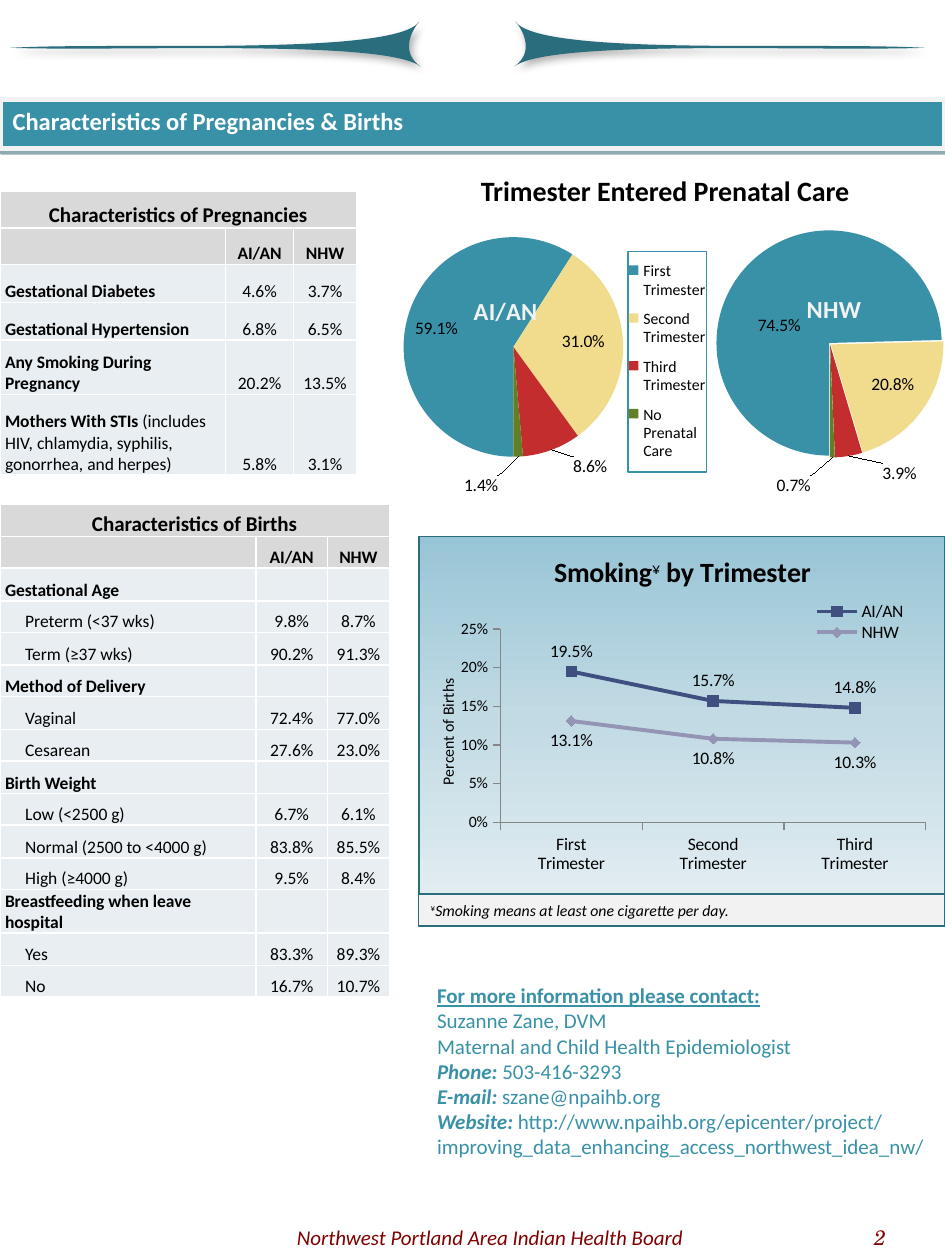
import pptx
import pptx.chart.data
import pptx.enum.chart
import pptx.enum.shapes
import pptx.enum.text
import pptx.oxml
import pptx.oxml.ns
import pptx.util
from lxml import etree
from pptx.dml.color import RGBColor
from pptx.util import Inches, Pt

qn = pptx.oxml.ns.qn
ALIGN = pptx.enum.text.PP_ALIGN
ANCHOR = pptx.enum.text.MSO_ANCHOR
KIND = pptx.enum.chart.XL_CHART_TYPE
SPOT = pptx.enum.chart.XL_LABEL_POSITION
MARK = pptx.enum.chart.XL_MARKER_STYLE
RECT = pptx.enum.shapes.MSO_SHAPE.RECTANGLE
HEX = {"teal": "3891A7", "deep": "2A6D7D", "sand": "F1DB8C", "red": "C32D2E",
       "green": "637F26", "black": "000000", "white": "FFFFFF", "maroon": "800000",
       "pale": "F2F2F2", "head": "D9D9D9", "body": "E8EEF1", "navy": "3F4F7F",
       "mauve": "9494B5", "axis": "868686", "bar": "205867"}
CATS = ["First Trimester", "Second Trimester", "Third Trimester", "No Prenatal Care"]
PREG = [("Gestational Diabetes", "4.6%", "3.7%"),
        ("Gestational Hypertension", "6.8%", "6.5%"),
        ("Any Smoking During\nPregnancy", "20.2%", "13.5%")]
STI = [[("Mothers With STIs ", "b"), ("(includes", "")],
       "HIV, chlamydia, syphilis,", "gonorrhea, and herpes)"]
BIRTHS = {
    "Gestational Age": [("Preterm (<37 wks)", "9.8%", "8.7%"),
                        ("Term (≥37 wks)", "90.2%", "91.3%")],
    "Method of Delivery": [("Vaginal", "72.4%", "77.0%"), ("Cesarean", "27.6%", "23.0%")],
    "Birth Weight": [("Low (<2500 g)", "6.7%", "6.1%"),
                     ("Normal (2500 to <4000 g)", "83.8%", "85.5%"),
                     ("High (≥4000 g)", "9.5%", "8.4%")],
    "Breastfeeding when leave\nhospital": [("Yes", "83.3%", "89.3%"),
                                           ("No", "16.7%", "10.7%")]}
CONTACT = [[("For more information please contact:", "bu")], "Suzanne Zane, DVM",
           "Maternal and Child Health Epidemiologist",
           [("Phone: ", "bi"), ("503-416-3293", "")],
           [("E-mail: ", "bi"), ("szane@npaihb.org", "")],
           [("Website: ", "bi"), ("http://www.npaihb.org/epicenter/project/", "")],
           "improving_data_enhancing_access_northwest_idea_nw/"]


def style(font, size, color="black", flags="", face="Calibri"):
    font.name, font.size = face, Pt(size)
    font.color.rgb = rgb(color)
    font.bold, font.italic = "b" in flags, "i" in flags
    if "u" in flags:
        font.underline = True
    if "^" in flags:
        font._element.set("baseline", "30000")


def rgb(name):
    return RGBColor.from_string(HEX[name])


def write(frame, lines, size, color="black", align=ALIGN.LEFT, face="Calibri"):
    """Each line is plain text or a list of (text, flags b, i, u, ^)."""
    for n, line in enumerate(lines):
        par = frame.add_paragraph() if n else frame.paragraphs[0]
        par.alignment = align
        for text, flags in [(line, "")] if isinstance(line, str) else line:
            run = par.add_run()
            run.text = text
            style(run.font, size, color, flags, face)


def fill(form, color):
    form.solid()
    form.fore_color.rgb = rgb(color)


def paint(shape, color, line=None, width=0.75):
    fill(shape.fill, color)
    if line:
        shape.line.color.rgb = rgb(line)
        shape.line.width = Pt(width)
    else:
        shape.line.fill.background()
    shape.shadow.inherit = False


def shade(shape, color, alpha, blur, dist, angle):
    root = shape._element.spPr.find(qn("a:effectLst"))
    drop = etree.SubElement(root, qn("a:outerShdw"), blurRad=str(Pt(blur)), dist=str(Pt(dist)),
                            dir=str(angle * 60000), algn="tl", rotWithShape="0")
    tint = etree.SubElement(drop, qn("a:srgbClr"), val=HEX[color])
    etree.SubElement(tint, qn("a:alpha"), val=str(alpha * 1000))


def swoosh(slide, curves):
    """Draw a closed outline of cubic curves, each two controls and an end."""
    ends = [tuple(map(Inches, c[-1])) for c in curves]
    pen = slide.shapes.build_freeform(*ends[-1])
    pen.add_line_segments(ends, close=True)
    shape = pen.convert_to_shape()
    for line, curve in zip(shape._element.findall(".//" + qn("a:lnTo")), curves):
        bend = etree.Element(qn("a:cubicBezTo"))
        for x, y in curve:
            etree.SubElement(bend, qn("a:pt"), x=str(Inches(x) - shape.left),
                             y=str(Inches(y) - shape.top))
        line.getparent().replace(line, bend)
    paint(shape, "deep")
    shade(shape, "black", 30, 4.5, 2.6, 53)


def text(slide, box, lines, size, color, align=ALIGN.LEFT, face="Calibri"):
    frame = slide.shapes.add_textbox(*map(Inches, box)).text_frame
    frame.word_wrap = True
    write(frame, lines, size, color, align, face)


def put(node, at, mode="", **box):
    """Give a chart part a manual layout, as fractions of the chart."""
    for old in node.findall(qn("c:layout")):
        node.remove(old)
    root = etree.Element(qn("c:layout"))
    man = etree.SubElement(root, qn("c:manualLayout"))
    if mode == "inner":
        etree.SubElement(man, qn("c:layoutTarget"), val="inner")
    if mode:
        for key in "xy":
            etree.SubElement(man, qn(f"c:{key}Mode"), val="edge")
    for key, val in box.items():
        etree.SubElement(man, qn(f"c:{key}"), val=str(val))
    node.insert(at, root)


def chart(slide, kind, box, cats, series, title, size, color):
    data = pptx.chart.data.CategoryChartData(number_format="0.0%")
    data.categories = cats
    for name, vals in series:
        data.add_series(name, vals)
    obj = slide.shapes.add_chart(kind, *map(Inches, box), data).chart
    obj.has_legend = False
    style(obj.font, 10)
    obj.has_title = True
    write(obj.chart_title.text_frame, [title], size, color, ALIGN.CENTER)
    return obj


def labels(owner, spot=None):
    owner.show_value = True
    owner.number_format, owner.number_format_is_linked = "0.0%", False
    style(owner.font, 10)
    if spot is not None:
        owner.position = spot


def pie(slide, box, name, vals, head, plot, tags):
    obj = chart(slide, KIND.PIE, box, CATS, [("Series 1", vals)], [(name, "b")], 14, "pale")
    put(obj.chart_title._element, 1, "edge", **dict(zip("xy", head)))
    area = obj.element.find(".//" + qn("c:plotArea"))
    put(area, 0, "inner", **dict(zip("xywh", plot)))
    wheel = area.find(qn("c:pieChart"))
    for old in wheel.findall(qn("c:firstSliceAng")):
        wheel.remove(old)
    etree.SubElement(wheel, qn("c:firstSliceAng"), val="180")
    part = obj.plots[0].series[0]
    labels(part.data_labels)
    for n, (color, tag) in enumerate(zip(("teal", "sand", "red", "green"), tags)):
        point = part.points[n]
        fill(point.format.fill, color)
        spot, x, y = tag
        point.data_label.position = spot
        style(point.data_label.font, 10)
        node = part._element.findall(".//" + qn("c:dLbl"))[n]
        put(node, 1, x=x, y=y)
        node.insert(2, etree.Element(qn("c:numFmt"), formatCode="0.0%", sourceLinked="0"))
    return obj


def legend(obj, size, **box):
    obj.has_legend = True
    obj.legend.include_in_layout = False
    style(obj.legend.font, size)
    put(obj.legend._element, 1, "edge", **box)


def border(inside, line):
    return pptx.oxml.parse_xml(
        f'<c:spPr {pptx.oxml.ns.nsdecls("c", "a")}>{inside}<a:ln w="9525"><a:solidFill>'
        f'<a:srgbClr val="{HEX[line]}"/></a:solidFill></a:ln></c:spPr>')


def smoking(slide):
    obj = chart(slide, KIND.LINE_MARKERS, (3.32, 4.25, 4.18, 2.85),
                [c.replace(" ", "\n") for c in CATS[:3]],
                [("AI/AN", (0.195, 0.157, 0.148)), ("NHW", (0.131, 0.108, 0.103))],
                [("Smoking", "b"), ("¥", "^"), (" by Trimester", "b")], 16, "black")
    put(obj.chart_title._element, 1, "edge", x=0.25, y=0.04)
    put(obj.element.find(".//" + qn("c:plotArea")), 0, "inner", x=0.155, y=0.26, w=0.81, h=0.54)
    legend(obj, 10, x=0.75, y=0.18, w=0.18, h=0.12)
    stops = "".join(f'<a:gs pos="{p}000"><a:srgbClr val="{c}"/></a:gs>'
                    for p, c in ((0, "98C5D6"), (50, "C1DAE4"), (100, "E1ECF1")))
    grad = f'<a:gradFill><a:gsLst>{stops}</a:gsLst><a:lin ang="5400000" scaled="0"/></a:gradFill>'
    obj.element.find(qn("c:chart")).addnext(border(grad, "deep"))
    val = obj.value_axis
    val.minimum_scale, val.maximum_scale, val.major_unit = 0, 0.25, 0.05
    val.has_major_gridlines = False
    val.tick_labels.number_format, val.tick_labels.number_format_is_linked = "0%", False
    write(val.axis_title.text_frame, ["Percent of Births"], 9, align=ALIGN.CENTER)
    put(val.axis_title._element, 1, "edge", x=0.03, y=0.39)
    for axis, size in ((val, 9), (obj.category_axis, 10)):
        style(axis.tick_labels.font, size)
        axis.format.line.color.rgb = rgb("axis")
    looks = (("navy", MARK.SQUARE, SPOT.ABOVE), ("mauve", MARK.DIAMOND, SPOT.BELOW))
    for part, (color, mark, spot) in zip(obj.plots[0].series, looks):
        part.smooth = False
        part.format.line.color.rgb = rgb(color)
        part.format.line.width = Pt(2.25)
        part.marker.style, part.marker.size = mark, 6
        fill(part.marker.format.fill, color)
        fill(part.marker.format.line.fill, color)
        labels(part.data_labels, spot)


def cell(box, lines, color, size=10, align=ALIGN.CENTER, left=0.01):
    box.margin_left, box.margin_right = Inches(left), Inches(0.01)
    box.margin_top, box.margin_bottom = Inches(0.01), 0
    box.vertical_anchor = ANCHOR.BOTTOM
    fill(box.fill, color)
    write(box.text_frame, lines, size, align=align)
    if not lines:
        etree.SubElement(box.text_frame.paragraphs[0]._p, qn("a:endParaRPr"), sz="1000")
    for n, side in enumerate("LRTB"):
        edge = etree.Element(qn(f"a:ln{side}"), w=str(Pt(1)))
        tint = etree.SubElement(edge, qn("a:solidFill"))
        etree.SubElement(tint, qn("a:srgbClr"), val=HEX["white"])
        box._tc.get_or_add_tcPr().insert(n, edge)


def table(slide, top, cols, tall, title, rows):
    """Each row is (label lines, left margin, values)."""
    grid = slide.shapes.add_table(len(tall), 3, 0, Inches(top), Inches(sum(cols)),
                                  Inches(sum(tall))).table
    for part, size in zip(grid.columns, cols):
        part.width = Inches(size)
    for part, size in zip(grid.rows, tall):
        part.height = Inches(size)
    grid.cell(0, 0).merge(grid.cell(0, 2))
    cell(grid.cell(0, 0), [[(title, "b")]], "head", 12)
    for c, name in enumerate(("", "AI/AN", "NHW")):
        cell(grid.cell(1, c), [[(name, "b")]] if name else [], "head")
    for r, (lines, left, vals) in enumerate(rows, 2):
        cell(grid.cell(r, 0), lines, "body", align=ALIGN.LEFT, left=left)
        for c, val in enumerate(vals, 1):
            cell(grid.cell(r, c), [val] if val else [], "body")


def bold(label):
    return [[(line, "b")] for line in label.split("\n")]


def heading(slide):
    bar = slide.shapes.title
    bar.left, bar.top, bar.width, bar.height = map(Inches, (0, 0.79, 7.5, 0.39))
    paint(bar, "teal", "pale", 3)
    shade(bar, "bar", 50, 0, 2.2, 63)
    frame = bar.text_frame
    frame.auto_size = pptx.enum.text.MSO_AUTO_SIZE.NONE
    frame.vertical_anchor = ANCHOR.TOP
    write(frame, [[("Characteristics of Pregnancies & Births", "b")]], 14, "white")
    frame.paragraphs[0].space_after = Pt(10)


def main():
    deck = pptx.Presentation()
    deck.slide_width, deck.slide_height = Inches(7.5), Inches(10)
    slide = deck.slides.add_slide(deck.slide_layouts[5])
    left = [[(3.07, .31), (1, .41), (.08, .38)], [(.99, .33), (3.14, .45), (3.33, .17)],
            [(3.26, .25), (3.18, .42), (3.34, .53)]]
    swoosh(slide, left)
    swoosh(slide, [[(7.42 - x, y) for x, y in c] for c in left])
    heading(slide)
    text(slide, (5.38, 9.67, 1.75, 0.58), [[("2", "i")]], 12, "maroon", ALIGN.RIGHT,
         "TeX Gyre Schola")
    text(slide, (2.19, 9.67, 3.4, 0.58), [[("Northwest Portland Area Indian Health Board", "i")]],
         12, "maroon", ALIGN.CENTER)
    first = pie(slide, (2.92, 1.2, 2.98, 3.14), "AI/AN", (0.591, 0.31, 0.086, 0.014),
                (0.27, 0.35), (0.095, 0.21, 0.585, 0.57),
                ((SPOT.INSIDE_END, 0, 0), (SPOT.CENTER, 0.04, -0.01),
                 (SPOT.OUTSIDE_END, 0.05, 0), (SPOT.OUTSIDE_END, -0.1, 0.03)))
    legend(first, 9, x=0.693, y=0.253, w=0.208, h=0.558)
    first.legend._element.find(qn("c:overlay")).addnext(border("", "teal"))
    other = pie(slide, (5.31, 1.2, 2.58, 2.93), "NHW", (0.745, 0.208, 0.039, 0.007),
                (0.41, 0.37), (0.145, 0.213, 0.7, 0.618),
                ((SPOT.CENTER, -0.03, 0.06), (SPOT.CENTER, 0.05, 0.02),
                 (SPOT.OUTSIDE_END, 0.1, 0), (SPOT.OUTSIDE_END, -0.12, 0.03)))
    ring = other.plots[0].series[0]._element
    ring.find(qn("c:dPt")).addprevious(etree.Element(qn("c:explosion"), val="1"))
    text(slide, (3.42, 1.33, 3.72, 0.37), [[("Trimester Entered Prenatal Care", "b")]],
         16, "black", ALIGN.CENTER)
    smoking(slide)
    births = []
    for group, items in BIRTHS.items():
        births.append((bold(group), 0.04, ("", "")))
        births += [([label], 0.2, vals) for label, *vals in items]
    table(slide, 4, (2.03, 0.57, 0.49), [0.26, 0.25] * 6 + [0.34, 0.26, 0.25],
          "Characteristics of Births", births)
    preg = [(bold(label), 0.04, vals) for label, *vals in PREG]
    preg.append((STI, 0.04, ("5.8%", "3.1%")))
    table(slide, 1.52, (1.79, 0.54, 0.5), [0.29, 0.29, 0.3, 0.3, 0.43, 0.64],
          "Characteristics of Pregnancies", preg)
    text(slide, (3.37, 7.75, 4.08, 1.51), CONTACT, 12, "teal")
    note = slide.shapes.add_shape(RECT, *map(Inches, (3.32, 7.1, 4.18, 0.25)))
    paint(note, "pale", "deep")
    write(note.text_frame,
          [[("¥", "^"), ("Smoking means at least one cigarette per day.", "i")]], 9)
    deck.save("out.pptx")


if __name__ == "__main__":
    main()
